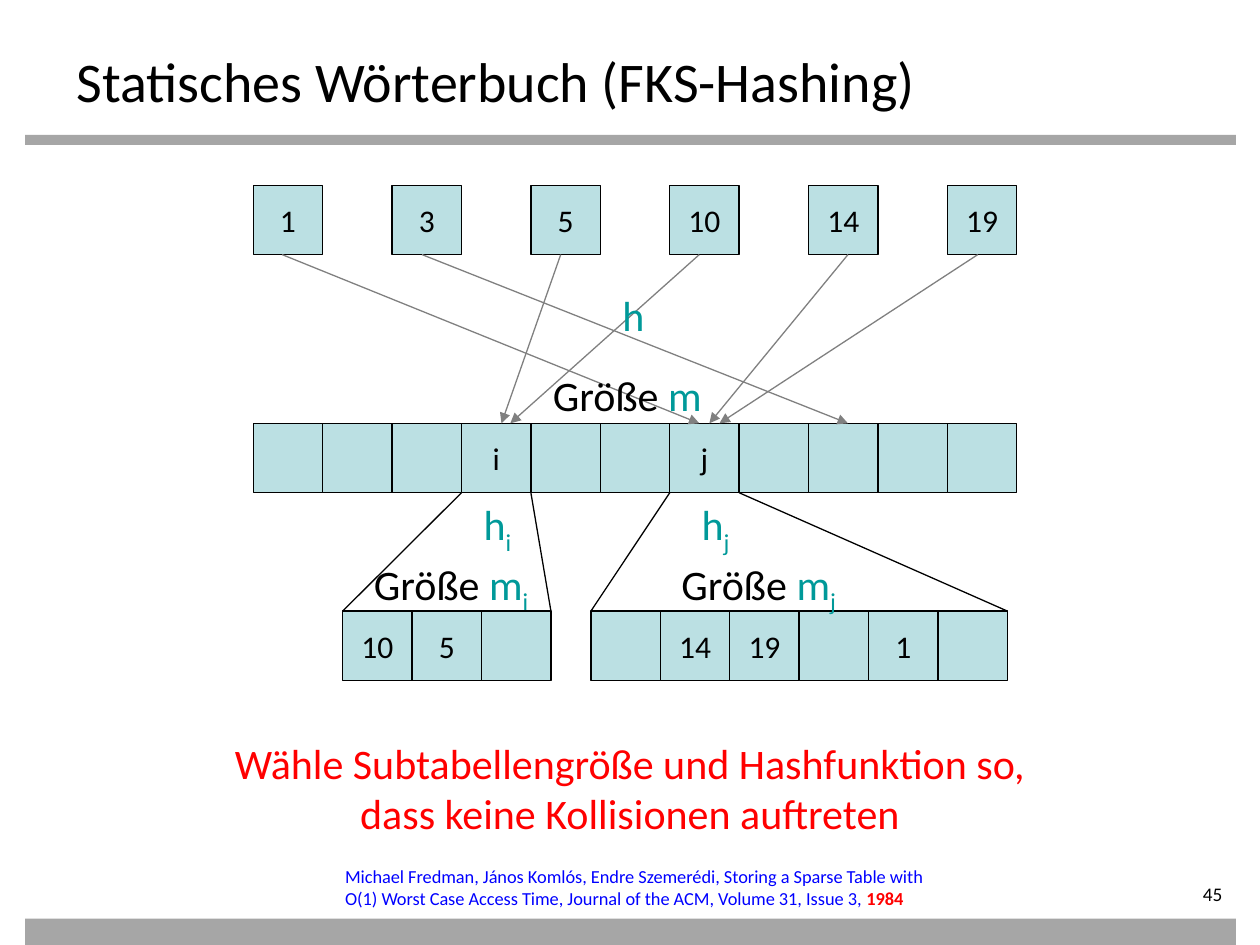
from pptx import Presentation
from pptx.dml.color import RGBColor
from pptx.enum.shapes import MSO_CONNECTOR, MSO_SHAPE
from pptx.enum.text import MSO_ANCHOR, MSO_AUTO_SIZE, PP_ALIGN
from pptx.oxml.ns import qn
from pptx.util import Inches, Pt
from lxml import etree

RECT = MSO_SHAPE.RECTANGLE
LINE = MSO_CONNECTOR.STRAIGHT
LEFT, CENTER, RIGHT = PP_ALIGN.LEFT, PP_ALIGN.CENTER, PP_ALIGN.RIGHT
TOP, MIDDLE = MSO_ANCHOR.TOP, MSO_ANCHOR.MIDDLE
FIT = MSO_AUTO_SIZE.SHAPE_TO_FIT_TEXT

BLACK, GRAY, BAR = "000000", "808080", "A6A6A6"
TEAL, AQUA, RED, BLUE = "009999", "BBE0E3", "FF0000", "0000FF"


def rgb(value):
    return RGBColor.from_string(value)


class Deck:
    font = "Calibri"
    line_width = Pt(0.75)

    def __init__(self, slide):
        self.s = slide

    def rect(self, x, y, w, h, fill, line=None):
        sp = self.s.shapes.add_shape(RECT, Inches(x), Inches(y), Inches(w), Inches(h))
        sp.shadow.inherit = False
        sp.fill.solid()
        sp.fill.fore_color.rgb = rgb(fill)
        if line:
            sp.line.color.rgb = rgb(line)
            sp.line.width = self.line_width
        else:
            sp.line.fill.background()
        return sp

    def run(self, p, text, size, color=BLACK, bold=False, sub=False):
        r = p.add_run()
        r.text = text
        r.font.name = self.font
        r.font.size = Pt(size)
        r.font.bold = bold
        r.font.color.rgb = rgb(color)
        if sub:
            r.font._element.set("baseline", "-25000")

    def cell(self, x, y, size, text=""):
        sp = self.rect(x, y, size, size, AQUA, BLACK)
        if text:
            tf = sp.text_frame
            tf.word_wrap = False
            tf.vertical_anchor = MIDDLE
            tf.paragraphs[0].alignment = CENTER
            self.run(tf.paragraphs[0], text, 18)

    def row(self, x, y, size, texts, pitch):
        for i, text in enumerate(texts):
            self.cell(x + i * pitch, y, size, text)

    def line(self, x1, y1, x2, y2, color=BLACK, arrow=False):
        c = self.s.shapes.add_connector(LINE, Inches(x1), Inches(y1), Inches(x2), Inches(y2))
        c.line.color.rgb = rgb(color)
        c.line.width = self.line_width
        if arrow:
            etree.SubElement(c.line._get_or_add_ln(), qn("a:tailEnd"), type="triangle")
        etree.SubElement(c._element.spPr, qn("a:effectLst"))

    def text(self, x, y, w, h, paragraphs, size, align=LEFT, wrap=False, insets=None):
        """Each paragraph is a list of (text, color, options) runs."""
        tb = self.s.shapes.add_textbox(Inches(x), Inches(y), Inches(w), Inches(h))
        tf = tb.text_frame
        tf.word_wrap = wrap
        tf.vertical_anchor = TOP
        if insets:
            tf.margin_left, tf.margin_top, tf.margin_right, tf.margin_bottom = map(Inches, insets)
        else:
            tf.auto_size = FIT
        for i, runs in enumerate(paragraphs):
            p = tf.add_paragraph() if i else tf.paragraphs[0]
            p.alignment = align
            for text, color, options in runs:
                self.run(p, text, size, color, **options)


def main():
    prs = Presentation()
    prs.slide_width, prs.slide_height = Inches(10), Inches(7.5)
    d = Deck(prs.slides.add_slide(prs.slide_layouts[6]))
    sub = {"sub": True}

    # Frame: bars, page number, title
    d.rect(0.2, 1.07, 9.61, 0.08, BAR)
    d.rect(0.2, 7.29, 9.61, 0.21, BAR)
    d.text(8.7, 7, 1.1, 0.22, [[("45", BLACK, {})]], 11, RIGHT, True, (0, 0, 0.1, 0))
    d.text(0.51, 0.28, 9, 0.55, [[("Statisches Wörterbuch (FKS-Hashing)", BLACK, {})]],
           32, wrap=True, insets=(0.1, 0.09, 0.1, 0))

    # Keys, main table and subtables
    left, key_y, main_y, sub_y = 2.01, 1.47, 3.36, 4.85
    cell = 6.06 / 11
    main_cells = [""] * 11
    main_cells[3], main_cells[6] = "i", "j"
    subtables = [
        (3, 2.72, ["10", "5", ""]),
        (6, 4.69, ["", "14", "19", "", "1", ""]),
    ]
    d.row(left, key_y, cell, ["1", "3", "5", "10", "14", "19"], 2 * cell)
    d.row(left, main_y, cell, main_cells, cell)

    # Hash function h: arrows from keys to slots
    arrows = [(2.24, 5.55), (3.35, 6.73), (4.45, 3.98),
              (5.55, 4.05), (6.73, 5.63), (7.76, 5.71)]
    for x1, x2 in arrows:
        d.line(x1, key_y + cell, x2, main_y, GRAY, arrow=True)

    # Subtables spread out from their slots
    for slot, x, texts in subtables:
        d.row(x, sub_y, cell, texts, cell)
        slot_x = left + slot * cell
        d.line(slot_x, main_y + cell, x, sub_y)
        d.line(slot_x + cell, main_y + cell, x + len(texts) * cell, sub_y)

    # Labels
    d.text(4.84, 2.25, 0.39, 0.5, [[("h", TEAL, {})]], 24)
    d.text(4.29, 2.88, 1.52, 0.5, [[("Größe ", BLACK, {}), ("m", TEAL, {})]], 24)
    for index, h_x, m_x in [("i", 3.74, 2.87), ("j", 5.47, 5.31)]:
        d.text(h_x, 3.91, 0.44, 0.5, [[("h", TEAL, {}), (index, TEAL, sub)]], 24)
        d.text(m_x, 4.38, 1.56, 0.5,
               [[("Größe ", BLACK, {}), ("m", TEAL, {}), (index, TEAL, sub)]], 24)

    # Conclusion and reference
    d.text(1.63, 5.8, 6.74, 0.91,
           [[("Wähle Subtabellengröße und Hashfunktion so,", RED, {})],
            [("dass keine Kollisionen auftreten", RED, {})]], 24, CENTER)
    d.text(2.64, 6.82, 5, 0.45,
           [[("Michael Fredman, János Komlós, Endre Szemerédi, Storing a Sparse Table with "
              "O(1) Worst Case Access Time, Journal of the ACM, Volume 31, Issue 3, ", BLUE, {}),
             ("1984", RED, {"bold": True})]], 10.5, wrap=True)

    prs.save("out.pptx")


if __name__ == "__main__":
    main()
